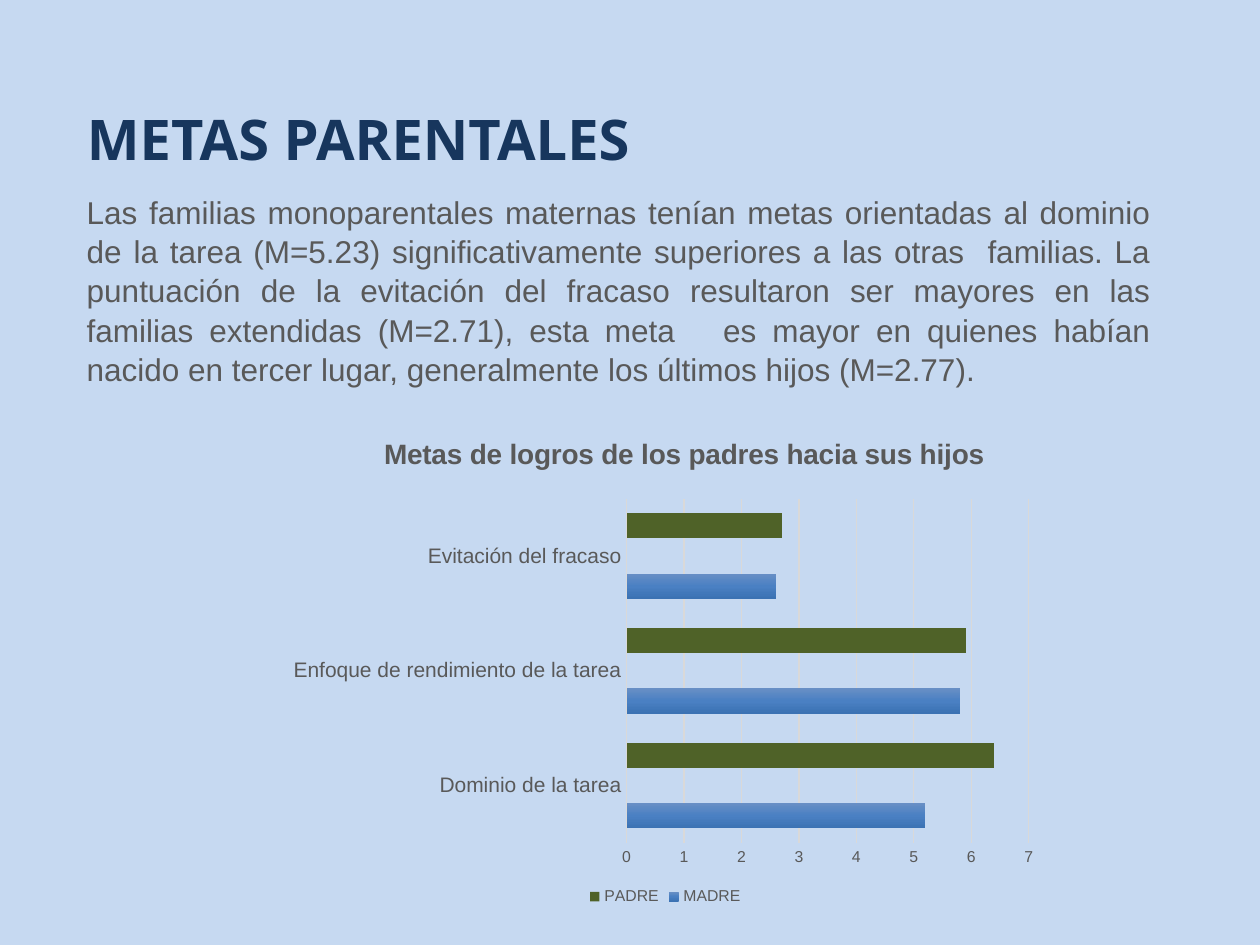
import copy
from dataclasses import dataclass

import pptx
import pptx.chart.data
import pptx.dml.color
import pptx.enum.chart
import pptx.enum.text
import pptx.oxml
import pptx.oxml.ns
import pptx.util
from pptx.util import Inches

GRAY = "595959"
GRID = "D9D9D9"
NAVY = "17365D"
BODY = (
    "Las familias monoparentales maternas tenían metas orientadas al dominio de la tarea "
    "(M=5.23) significativamente superiores a las otras  familias. La puntuación de la "
    "evitación del fracaso resultaron ser mayores en las familias extendidas (M=2.71), "
    "esta meta   es mayor en quienes habían nacido en tercer lugar, generalmente los "
    "últimos hijos (M=2.77)."
)
CATEGORIES = ["Dominio de la tarea", "Enfoque de rendimiento de la tarea", "Evitación del fracaso"]


@dataclass
class BarSeries:
    name: str
    values: list[float]
    colors: list[str]


SERIES = [
    BarSeries("MADRE", [5.2, 5.8, 2.6], ["688FC5", "4A80C3", "3B72B3"]),
    BarSeries("Series 2", [0, 0, 0], ["C76967", "C64B47", "B63C39"]),
    BarSeries("PADRE", [6.4, 5.9, 2.7], ["4F6228"]),
]


def rgb(value: str) -> pptx.dml.color.RGBColor:
    return pptx.dml.color.RGBColor.from_string(value)


def style_font(font, size: float, color: str, bold: bool = False, name: str = "Arial") -> None:
    font.name = name
    font.size = pptx.util.Pt(size)
    font.bold = bold
    font.color.rgb = rgb(color)


def style_line(line, color: str, width: float) -> None:
    line.color.rgb = rgb(color)
    line.width = pptx.util.Pt(width)


def chart_xml(markup: str):
    namespace = pptx.oxml.ns.nsdecls("c")
    return pptx.oxml.parse_xml(markup.replace(">", f" {namespace}>", 1))


def manual_layout(x: float, y: float, size: tuple[float, float] | None = None):
    target = '<c:layoutTarget val="inner"/>' if size else ""
    extent = f'<c:w val="{size[0]}"/><c:h val="{size[1]}"/>' if size else ""
    return chart_xml(
        f"<c:layout><c:manualLayout>{target}"
        '<c:xMode val="edge"/><c:yMode val="edge"/>'
        f'<c:x val="{x}"/><c:y val="{y}"/>{extent}</c:manualLayout></c:layout>'
    )


def place(element, layout, index: int) -> None:
    for old in element.findall(pptx.oxml.ns.qn("c:layout")):
        element.remove(old)
    element.insert(index, layout)


def fill_series(series, colors: list[str]) -> None:
    fill = series.format.fill
    if len(colors) == 1:
        fill.solid()
        fill.fore_color.rgb = rgb(colors[0])
        return
    fill.gradient()
    fill.gradient_angle = 270
    stops = next(series.format.fill._xPr.iter(pptx.oxml.ns.qn("a:gsLst")))
    stops.insert(1, copy.deepcopy(stops[0]))
    for index, (stop, color) in enumerate(zip(fill.gradient_stops, colors)):
        stop.position = index / (len(colors) - 1)
        stop.color.rgb = rgb(color)


def add_title(page) -> None:
    title = page.shapes.title
    title.left, title.top = Inches(0.59), Inches(0.78)
    title.width, title.height = Inches(8.5), Inches(5.6)
    frame = title.text_frame
    frame.text = "METAS PARENTALES"
    frame.auto_size = pptx.enum.text.MSO_AUTO_SIZE.NONE
    frame.vertical_anchor = pptx.enum.text.MSO_ANCHOR.TOP
    para = frame.paragraphs[0]
    para.alignment = pptx.enum.text.PP_ALIGN.LEFT
    style_font(para.runs[0].font, 32, NAVY, True, "Open Sans")


def add_body(page) -> None:
    box = page.shapes.add_textbox(Inches(0.59), Inches(1.47), Inches(8.64), Inches(1.62))
    frame = box.text_frame
    frame.word_wrap = True
    frame.text = BODY
    para = frame.paragraphs[0]
    para.alignment = pptx.enum.text.PP_ALIGN.JUSTIFY
    para.line_spacing = 1.04
    style_font(para.runs[0].font, 18, GRAY)


def style_axes(chart) -> None:
    no_marks = pptx.enum.chart.XL_TICK_MARK.NONE
    for axis, size in ((chart.category_axis, 12), (chart.value_axis, 9)):
        axis.major_tick_mark = axis.minor_tick_mark = no_marks
        style_font(axis.tick_labels.font, size, GRAY)
    chart.category_axis.has_major_gridlines = False
    style_line(chart.category_axis.format.line, GRID, 1)
    values = chart.value_axis
    values.minimum_scale, values.maximum_scale, values.major_unit = 0, 7, 1
    values.format.line.fill.background()
    values.has_major_gridlines = True
    style_line(values.major_gridlines.format.line, GRID, 0.75)
    values.tick_labels.number_format = "0"
    values.tick_labels.number_format_is_linked = False


def add_goals_chart(page) -> None:
    data = pptx.chart.data.CategoryChartData()
    data.categories = CATEGORIES
    for item in SERIES:
        data.add_series(item.name, item.values)
    chart = page.shapes.add_chart(
        pptx.enum.chart.XL_CHART_TYPE.BAR_CLUSTERED,
        Inches(2.21), Inches(3.38), Inches(6.14), Inches(3.85), data,
    ).chart
    style_font(chart.font, 10, "000000")

    chart.has_title = True
    frame = chart.chart_title.text_frame
    frame.text = "Metas de logros de los padres hacia sus hijos"
    style_font(frame.paragraphs[0].runs[0].font, 16, GRAY, True)
    chart.chart_title.include_in_layout = False
    place(chart.chart_title._element, manual_layout(0.13, 0.01), 1)

    style_axes(chart)
    plot = chart.plots[0]
    plot.gap_width, plot.overlap = 115, -20
    plot.vary_by_categories = False
    for series, item in zip(plot.series, SERIES):
        fill_series(series, item.colors)
    plot_area = chart._chartSpace.chart.plotArea
    place(plot_area, manual_layout(0.45, 0.15, (0.52, 0.71)), 0)

    chart.has_legend = True
    legend = chart.legend
    legend.position = pptx.enum.chart.XL_LEGEND_POSITION.BOTTOM
    legend.include_in_layout = False
    style_font(legend.font, 9, GRAY)
    hidden = chart_xml('<c:legendEntry><c:idx val="1"/><c:delete val="1"/></c:legendEntry>')
    legend._element.insert(1, hidden)


def main() -> None:
    deck = pptx.Presentation()
    deck.slide_width, deck.slide_height = Inches(10), Inches(7.5)
    page = deck.slides.add_slide(deck.slide_layouts[5])
    page.background.fill.solid()
    page.background.fill.fore_color.rgb = rgb("C6D9F1")
    add_title(page)
    add_goals_chart(page)
    add_body(page)
    deck.save("out.pptx")


if __name__ == "__main__":
    main()
